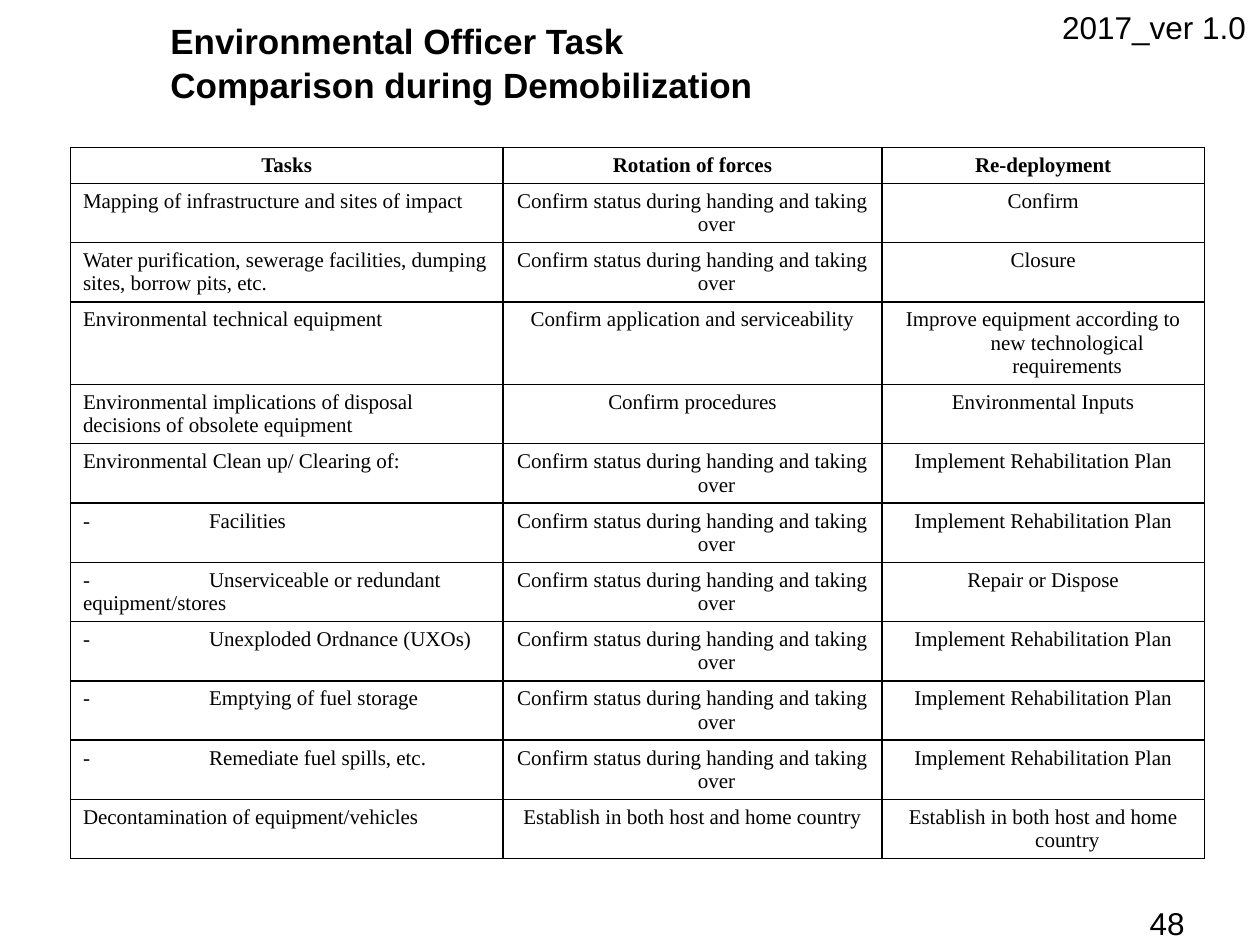
"""Build the slide comparing environmental officer tasks during demobilization."""
import pptx
import pptx.dml.color
import pptx.enum.text
import pptx.oxml
import pptx.oxml.ns
import pptx.util
from pptx.util import Cm

ALIGN = pptx.enum.text.PP_ALIGN
BLACK = "000000"
NAMESPACE = pptx.oxml.ns.nsdecls("a")
STATUS = "Confirm status during handing and taking over"
REHABILITATE = "Implement Rehabilitation Plan"
ESTABLISH = "Establish in both host and home country"
HEADER = ("Tasks", "Rotation of forces", "Re-deployment")
TASKS = [
    ("Mapping of infrastructure and sites of impact", STATUS, "Confirm"),
    ("Water purification, sewerage facilities, dumping sites, borrow pits, etc.", STATUS, "Closure"),
    ("Environmental technical equipment", "Confirm application and serviceability",
     "Improve equipment according to new technological requirements"),
    ("Environmental implications of disposal decisions of obsolete equipment",
     "Confirm procedures", "Environmental Inputs"),
    ("Environmental Clean up/ Clearing of:", STATUS, REHABILITATE),
    ("-\tFacilities", STATUS, REHABILITATE),
    ("-\tUnserviceable or redundant equipment/stores", STATUS, "Repair or Dispose"),
    ("-\tUnexploded Ordnance (UXOs)", STATUS, REHABILITATE),
    ("-\tEmptying of fuel storage", STATUS, REHABILITATE),
    ("-\tRemediate fuel spills, etc.", STATUS, REHABILITATE),
    ("Decontamination of equipment/vehicles", ESTABLISH, ESTABLISH),
]
COLUMN_WIDTHS = (8.72, 7.64, 6.5)
HEADER_HEIGHT, TWO_LINES, THREE_LINES = 0.72, 1.19, 1.66
TALL_ROW = 3


def color(value):
    return pptx.dml.color.RGBColor.from_string(value)


class SlideBuilder:
    def __init__(self, slide):
        self.slide = slide
        self.text_font = "Arial"
        self.table_font = "Times New Roman"

    def format(self, paragraph, name, size, bold=False, align=ALIGN.LEFT):
        paragraph.alignment = align
        font = paragraph.font
        font.name, font.size, font.bold = name, pptx.util.Pt(size), bold
        font.color.rgb = color(BLACK)

    def fill_frame(self, shape, lines, size, bold, align, wrap):
        frame = shape.text_frame
        frame.text = "\n".join(lines)
        frame.word_wrap = wrap
        frame.auto_size = pptx.enum.text.MSO_AUTO_SIZE.NONE
        frame.vertical_anchor = pptx.enum.text.MSO_ANCHOR.TOP
        for paragraph in frame.paragraphs:
            paragraph.line_spacing = 1.05
            self.format(paragraph, self.text_font, size, bold, align)

    def title(self, lines, left, top, width, height):
        shape = self.slide.shapes.title
        shape.left, shape.top, shape.width, shape.height = map(Cm, (left, top, width, height))
        self.fill_frame(shape, lines, 20, True, ALIGN.LEFT, False)

    def text(self, line, left, top, width, height, align=ALIGN.LEFT, wrap=False):
        shape = self.slide.shapes.add_textbox(*map(Cm, (left, top, width, height)))
        self.fill_frame(shape, [line], 18, False, align, wrap)

    def cell(self, cell, text, bold, align, hanging):
        cell.text = text
        paragraph = cell.text_frame.paragraphs[0]
        properties = paragraph._p.get_or_add_pPr()
        if hanging:
            properties.set("marL", str(Cm(0.97)))
            properties.set("indent", str(-Cm(0.97)))
        elif "\t" in text:
            properties.append(pptx.oxml.parse_xml(
                f'<a:tabLst {NAMESPACE}><a:tab pos="{Cm(2.54)}" algn="l"/></a:tabLst>'))
        self.format(paragraph, self.table_font, 12, bold, align)
        for side in ("lnL", "lnR", "lnT", "lnB"):
            cell._tc.get_or_add_tcPr().append(pptx.oxml.parse_xml(
                f'<a:{side} {NAMESPACE} w="{pptx.util.Pt(1)}"><a:solidFill>'
                f'<a:srgbClr val="{BLACK}"/></a:solidFill></a:{side}>'))
        cell.fill.background()

    def table(self, rows, left, top, widths, heights):
        table = self.slide.shapes.add_table(
            len(rows), len(widths), Cm(left), Cm(top), Cm(sum(widths)), Cm(sum(heights))).table
        table.first_row = table.horz_banding = False
        for column, width in zip(table.columns, widths):
            column.width = Cm(width)
        for row_index, (values, height) in enumerate(zip(rows, heights)):
            table.rows[row_index].height = Cm(height)
            for column_index, value in enumerate(values):
                header = row_index == 0
                align = ALIGN.CENTER if header or column_index else ALIGN.LEFT
                hanging = column_index > 0 or row_index < 2
                self.cell(table.cell(row_index, column_index), value, header, align, hanging)


def main():
    presentation = pptx.Presentation()
    presentation.slide_width, presentation.slide_height = Cm(25.4), Cm(19.05)
    builder = SlideBuilder(presentation.slides.add_slide(presentation.slide_layouts[5]))
    heights = [HEADER_HEIGHT] + [TWO_LINES] * len(TASKS)
    heights[TALL_ROW] = THREE_LINES
    builder.table([HEADER] + TASKS, 1.42, 2.97, COLUMN_WIDTHS, heights)
    builder.title(["Environmental Officer Task", "Comparison during Demobilization"],
                  3.18, 0.23, 12.34, 1.96)
    builder.text("48", 18.21, 18.06, 5.92, 1.32, ALIGN.RIGHT, True)
    builder.text("2017_ver 1.0", 21.16, 0, 4.24, 1.02)
    presentation.save("out.pptx")


if __name__ == "__main__":
    main()
